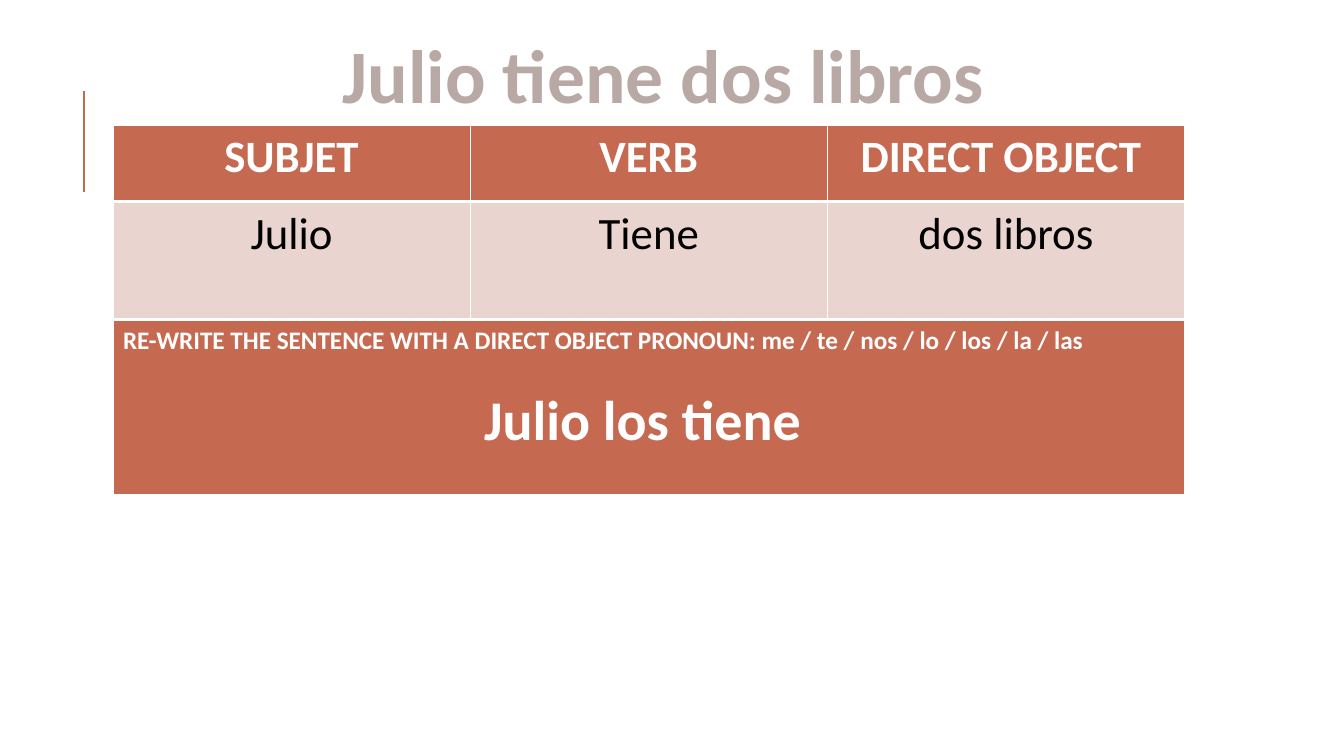
from dataclasses import dataclass

from lxml import etree
from pptx import Presentation
from pptx.dml.color import RGBColor
from pptx.enum import shapes, text
from pptx.oxml import ns
from pptx.util import Inches, Pt


@dataclass(frozen=True)
class Theme:
    font: str = "Calibri"
    rust: str = "C66951"
    blush: str = "EAD4D0"
    taupe: str = "B8A9A5"
    white: str = "FFFFFF"
    black: str = "000000"
    title: int = 54
    answer: int = 40
    word: int = 32
    prompt: int = 18


@dataclass(frozen=True)
class Line:
    words: str
    size: int
    color: str
    bold: bool = True
    center: bool = True
    before: int = 0


@dataclass(frozen=True)
class Row:
    height: float
    fill: str
    base: int
    cells: list[list[Line]]


@dataclass(frozen=True)
class Grid:
    top: float
    rows: list[Row]


THEME = Theme()
LEFT, WIDTH = 1.12, 10.63


def write(frame, lines: list[Line]) -> None:
    frame.text = "\n".join(line.words for line in lines)
    for para, line in zip(frame.paragraphs, lines):
        para.alignment = text.PP_ALIGN.CENTER if line.center else text.PP_ALIGN.LEFT
        para.space_before = Pt(line.before)
        for run in para.runs:
            font = run.font
            font.name, font.size, font.bold = THEME.font, Pt(line.size), line.bold
            font.color.rgb = RGBColor.from_string(line.color)


def edge(cell, base: int) -> None:
    props = cell._tc.get_or_add_tcPr()
    for spot, side in enumerate("LRTB"):
        width = base if side == "B" else 1
        line = etree.Element(ns.qn(f"a:ln{side}"), w=str(Pt(width)))
        fill = etree.SubElement(line, ns.qn("a:solidFill"))
        etree.SubElement(fill, ns.qn("a:srgbClr"), val=THEME.white)
        props.insert(spot, line)


def draw(slide, grid: Grid) -> None:
    count = len(grid.rows[0].cells)
    height = sum(row.height for row in grid.rows)
    table = slide.shapes.add_table(
        len(grid.rows), count, Inches(LEFT), Inches(grid.top), Inches(WIDTH), Inches(height)
    ).table
    for r, row in enumerate(grid.rows):
        table.rows[r].height = Inches(row.height)
        for c, lines in enumerate(row.cells):
            cell = table.cell(r, c)
            cell.fill.solid()
            cell.fill.fore_color.rgb = RGBColor.from_string(row.fill)
            edge(cell, row.base)
            write(cell.text_frame, lines)


def accent(slide) -> None:
    bar = slide.shapes.add_connector(
        shapes.MSO_CONNECTOR.STRAIGHT, Inches(0.83), Inches(1.9), Inches(0.83), Inches(0.9)
    )
    bar.line.color.rgb = RGBColor.from_string(THEME.rust)
    bar.line.width = Pt(1.5)
    etree.SubElement(bar._element.spPr, ns.qn("a:effectLst"))


def title(slide) -> None:
    box = slide.shapes.add_textbox(Inches(3.2), Inches(0.23), Inches(6.93), Inches(1.01))
    box.text_frame.word_wrap = False
    write(box.text_frame, [Line("Julio tiene dos libros ", THEME.title, THEME.taupe)])


def main() -> None:
    heads = ["SUBJET", "VERB", "DIRECT OBJECT "]
    parts = ["Julio", "Tiene", "dos libros"]
    prompt = "RE-WRITE THE SENTENCE WITH A DIRECT OBJECT PRONOUN: me / te / nos / lo / los / la / las"
    grids = [
        Grid(1.24, [
            Row(0.76, THEME.rust, 3, [[Line(head, THEME.word, THEME.white)] for head in heads]),
            Row(1.16, THEME.blush, 1, [[Line(part, THEME.word, THEME.black, False)] for part in parts]),
        ]),
        Grid(3.18, [
            Row(1.74, THEME.rust, 3, [[
                Line(prompt, THEME.prompt, THEME.white, center=False),
                Line("Julio los tiene ", THEME.answer, THEME.white, before=22),
            ]]),
        ]),
    ]
    deck = Presentation()
    deck.slide_width, deck.slide_height = Inches(13.33), Inches(7.5)
    slide = deck.slides.add_slide(deck.slide_layouts[6])
    accent(slide)
    for grid in grids:
        draw(slide, grid)
    title(slide)
    deck.save("out.pptx")


if __name__ == "__main__":
    main()
